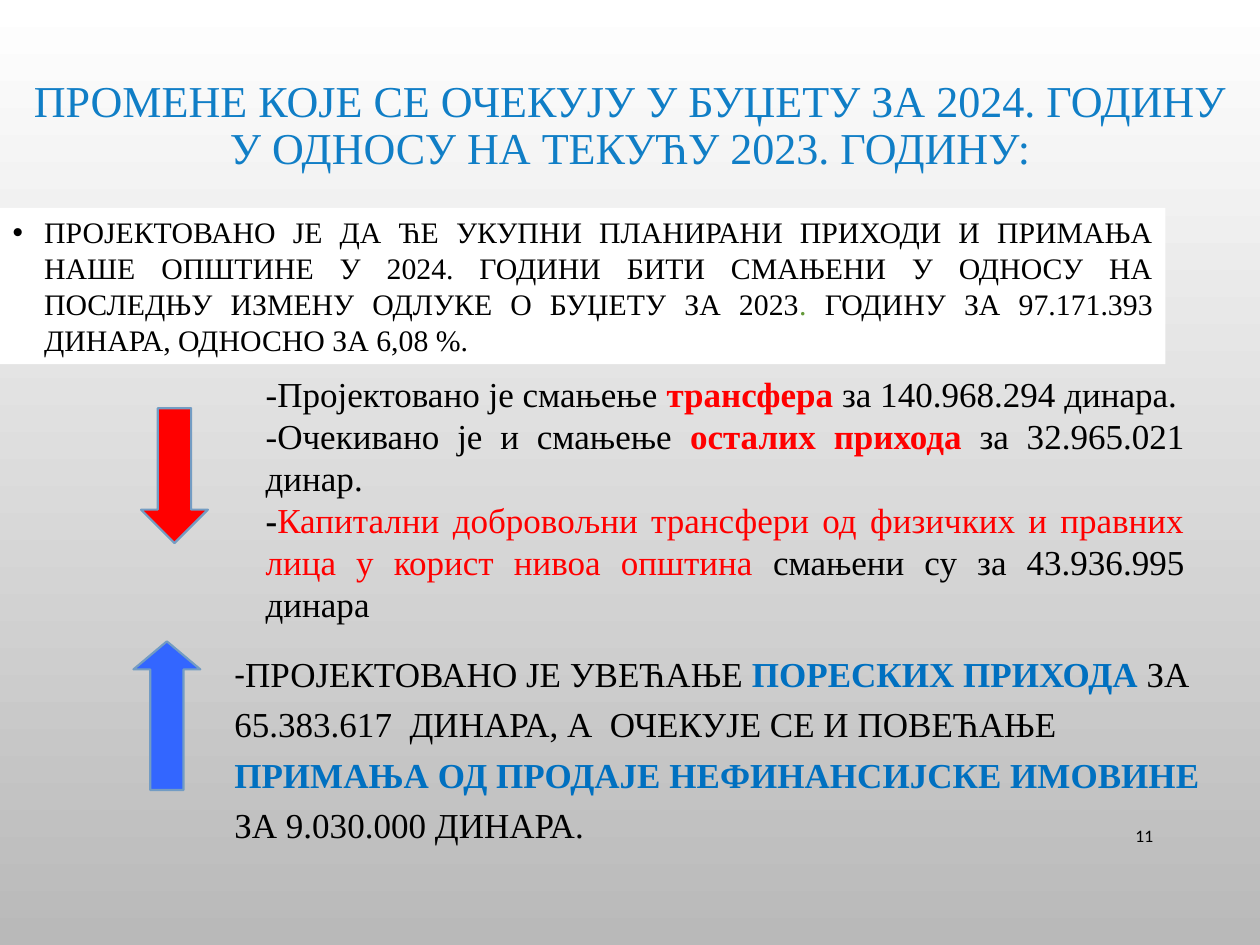
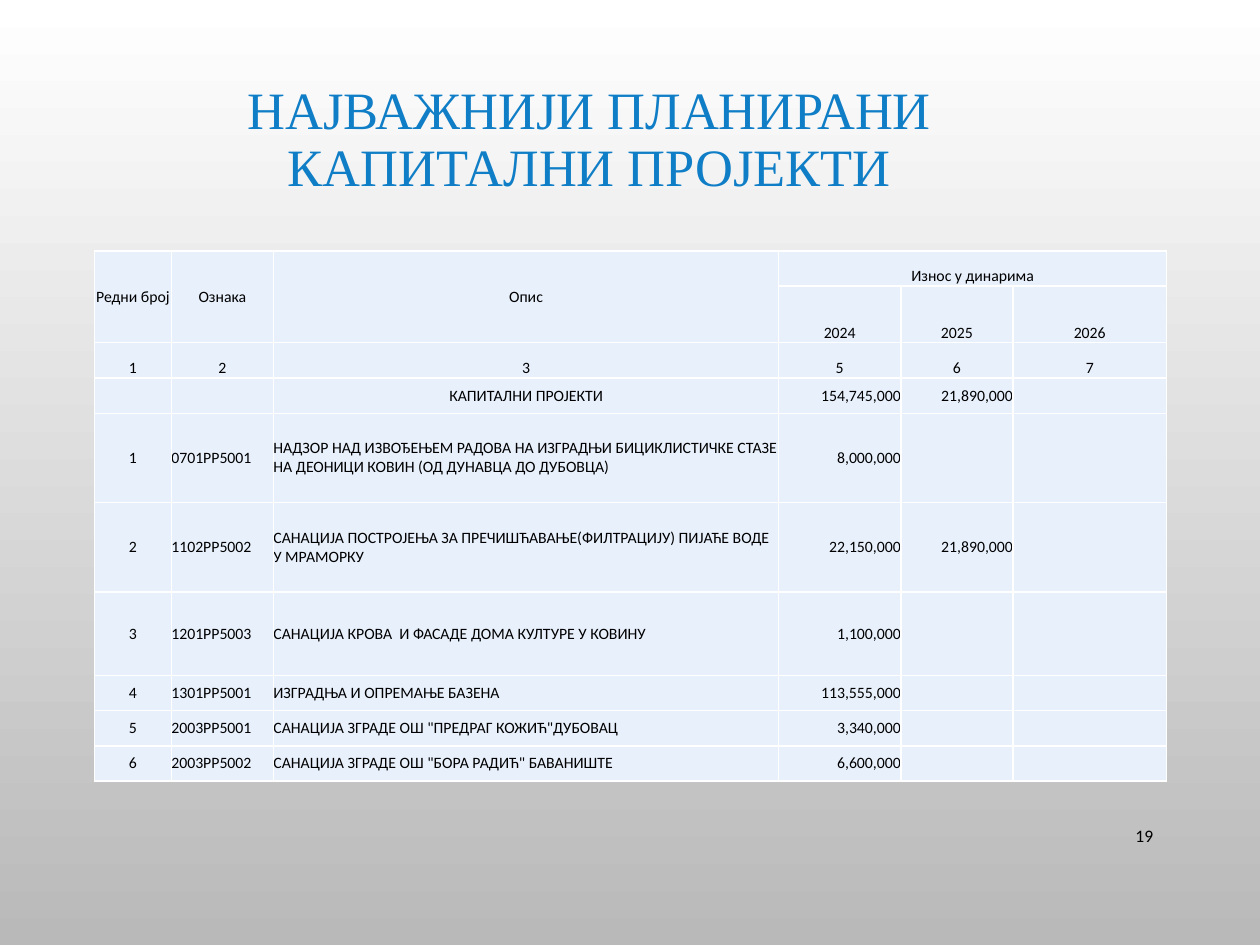
from lxml import etree
from pptx import Presentation
from pptx.dml.color import RGBColor
from pptx.enum.shapes import MSO_SHAPE
from pptx.enum.text import MSO_ANCHOR, MSO_AUTO_SIZE, PP_ALIGN
from pptx.oxml.ns import qn
from pptx.util import Inches, Pt

LEFT, CENTER, RIGHT, JUSTIFY = PP_ALIGN.LEFT, PP_ALIGN.CENTER, PP_ALIGN.RIGHT, PP_ALIGN.JUSTIFY
MIDDLE, BOTTOM = MSO_ANCHOR.MIDDLE, MSO_ANCHOR.BOTTOM
NO_AUTOFIT = MSO_AUTO_SIZE.NONE
DOWN_ARROW, UP_ARROW = MSO_SHAPE.DOWN_ARROW, MSO_SHAPE.UP_ARROW

SERIF, SANS = "Times New Roman", "Calibri"
WHITE, GREY, BLACK = "FFFFFF", "B9B9B9", "000000"
TITLE_BLUE, TEXT_BLUE, ARROW_BLUE = "107EC6", "0070C0", "3366FF"
RED, GREEN, ARROW_LINE, CELL_FILL = "FF0000", "649939", "739CC3", "E8F0FC"

presentation = Presentation()
presentation.slide_width, presentation.slide_height = Inches(10), Inches(7.5)
COLUMN = presentation.slide_width / 100
ROW = presentation.slide_height / 75
colour = RGBColor.from_string


def area(left, top, width, height):
    """Turn columns and rows of the 100 by 75 slide grid into lengths."""
    return int(left * COLUMN), int(top * ROW), int(width * COLUMN), int(height * ROW)


def write_runs(paragraph, size, pieces):
    """Add runs from (text, colour, bold, font) tuples."""
    for text, hex_colour, bold, font_name in pieces:
        run = paragraph.add_run()
        run.text = text
        run.font.size, run.font.name, run.font.bold = Pt(size), font_name, bold
        run.font.color.rgb = colour(hex_colour)


# Background, title and number of both slides
slide_frames = [
    (3, "ПРОМЕНЕ КОЈЕ СЕ ОЧЕКУЈУ У БУЏЕТУ ЗА 2024. ГОДИНУ\vУ ОДНОСУ НА ТЕКУЋУ 2023. ГОДИНУ:",
     25.2, (1.2, 3.8, 97.6, 12.5), "11"),
    (5, "НАЈВАЖНИЈИ ПЛАНИРАНИ \vКАПИТАЛНИ ПРОЈЕКТИ ", 30, (2.3, 6.4, 90, 9.6), "19"),
]
for layout, title_text, title_size, title_area, number in slide_frames:
    slide = presentation.slides.add_slide(presentation.slide_layouts[layout])
    background = slide.background.fill
    background.gradient()
    background.gradient_angle = 270
    for stop, hex_colour in zip(background.gradient_stops, (WHITE, GREY)):
        stop.color.rgb = colour(hex_colour)

    title = slide.shapes.title
    title.left, title.top, title.width, title.height = area(*title_area)
    title.text_frame.text = title_text
    title.text_frame.auto_size = NO_AUTOFIT
    title.text_frame.vertical_anchor = MIDDLE
    paragraph = title.text_frame.paragraphs[0]
    paragraph.alignment, paragraph.line_spacing = CENTER, 0.9
    for run in paragraph.runs:
        run.font.size, run.font.name = Pt(title_size), SERIF
        run.font.color.rgb = colour(TITLE_BLUE)

    number_box = slide.shapes.add_textbox(*area(86.2, 64.3, 6.3, 4))
    number_box.text_frame.word_wrap = True
    number_box.text_frame.vertical_anchor = MIDDLE
    paragraph = number_box.text_frame.paragraphs[0]
    paragraph.alignment = RIGHT
    write_runs(paragraph, 10, [(number, BLACK, False, SANS)])

changes_slide, projects_slide = presentation.slides

# Budget changes: total, decreases and increases
total, increase = changes_slide.placeholders[1], changes_slide.placeholders[2]
total.left, total.top, total.width, total.height = area(0, 16.5, 92.5, 12.4)
increase.left, increase.top, increase.width, increase.height = area(17.6, 50.6, 79.9, 14.6)
total.fill.solid()
total.fill.fore_color.rgb = colour(WHITE)
for body in (total, increase):
    body.text_frame.auto_size = NO_AUTOFIT
    body.text_frame.paragraphs[0].space_before = Pt(0)

paragraph = total.text_frame.paragraphs[0]
paragraph.alignment = JUSTIFY
properties = paragraph._p.get_or_add_pPr()
properties.set("marL", str(Inches(0.25)))
properties.set("indent", str(Inches(-0.25)))
bullet_colour = etree.SubElement(properties, qn("a:buClr"))
etree.SubElement(bullet_colour, qn("a:srgbClr"), val=BLACK)
etree.SubElement(properties, qn("a:buChar"), char="•")
write_runs(paragraph, 17, [
    ("ПРОЈЕКТОВАНО ЈЕ ДА ЋЕ УКУПНИ ПЛАНИРАНИ ПРИХОДИ И ПРИМАЊА НАШЕ ОПШТИНЕ У 2024. ГОДИНИ "
     "БИТИ СМАЊЕНИ У ОДНОСУ НА ПОСЛЕДЊУ ИЗМЕНУ ОДЛУКЕ О БУЏЕТУ ЗА 2023", BLACK, False, SERIF),
    (". ", GREEN, False, SERIF),
    ("ГОДИНУ ЗА 97.171.393 ДИНАРА, ОДНОСНО ЗА 6,08 %.", BLACK, False, SERIF),
])

paragraph = increase.text_frame.paragraphs[0]
paragraph.line_spacing = 1.2
properties = paragraph._p.get_or_add_pPr()
properties.set("marL", "0")
properties.set("indent", "0")
etree.SubElement(properties, qn("a:buNone"))
write_runs(paragraph, 20, [
    ("-", BLACK, False, SANS),
    ("ПРОЈЕКТОВАНО ЈЕ УВЕЋАЊЕ ", BLACK, False, SERIF),
    ("ПОРЕСКИХ ПРИХОДА ", TEXT_BLUE, True, SERIF),
    ("ЗА 65.383.617  ДИНАРА, А  ОЧЕКУЈЕ СЕ И ПОВЕЋАЊЕ ", BLACK, False, SERIF),
    ("ПРИМАЊА ОД ПРОДАЈЕ НЕФИНАНСИЈСКЕ ИМОВИНЕ ", TEXT_BLUE, True, SERIF),
    ("ЗА 9.030.000 ДИНАРА.", BLACK, False, SERIF),
])

decreases = [
    [("-Пројектовано је смањење ", BLACK, False, SERIF),
     ("трансфера", RED, True, SERIF),
     (" за 140.968.294 динара.", BLACK, False, SERIF)],
    [("-Очекивано је и смањење ", BLACK, False, SERIF),
     ("осталих прихода ", RED, True, SERIF),
     ("за 32.965.021 динар.", BLACK, False, SERIF)],
    [("-", BLACK, True, SERIF),
     ("Капитални добровољни трансфери од физичких и правних лица у корист нивоа општина ",
      RED, False, SERIF),
     ("смањени су за 43.936.995 динара", BLACK, False, SERIF)],
]
decrease_frame = changes_slide.shapes.add_textbox(*area(20.1, 29.1, 74.9, 21.4)).text_frame
decrease_frame.word_wrap = True
for index, pieces in enumerate(decreases):
    paragraph = decrease_frame.add_paragraph() if index else decrease_frame.paragraphs[0]
    paragraph.alignment = JUSTIFY
    write_runs(paragraph, 20, pieces)

arrows = [
    (DOWN_ARROW, (11.2, 32.4, 5.3, 10.7), RED, 0.5),
    (UP_ARROW, (10.6, 50.9, 5.3, 11.8), ARROW_BLUE, 0.42),
]
for arrow_type, arrow_area, hex_colour, head_share in arrows:
    arrow = changes_slide.shapes.add_shape(arrow_type, *area(*arrow_area))
    arrow.shadow.inherit = False
    arrow.adjustments[1] = head_share
    arrow.fill.solid()
    arrow.fill.fore_color.rgb = colour(hex_colour)
    arrow.line.color.rgb = colour(ARROW_LINE)
    arrow.line.width = Pt(1.25)

# Capital projects table
column_widths = [6.1, 8.1, 40.1, 9.7, 8.9, 12.2]
row_heights = [2.8, 4.5, 2.8, 2.8, 7.1, 7.1, 6.6, 2.8, 2.8, 2.8]
project_rows = [
    ["Редни број", "Ознака", "Опис", "Износ у динарима", "", ""],
    ["", "", "", "2024", "2025", "2026"],
    ["1", "2", "3", "5", "6", "7"],
    ["", "", "КАПИТАЛНИ ПРОЈЕКТИ", "154,745,000", "21,890,000", ""],
    ["1", "0701PP5001", "НАДЗОР НАД ИЗВОЂЕЊЕМ РАДОВА НА ИЗГРАДЊИ БИЦИКЛИСТИЧКЕ СТАЗЕ "
     "НА ДЕОНИЦИ КОВИН (ОД ДУНАВЦА ДО ДУБОВЦА)", "8,000,000", "", ""],
    ["2", "1102PP5002", "САНАЦИЈА ПОСТРОЈЕЊА ЗА ПРЕЧИШЋАВАЊЕ(ФИЛТРАЦИЈУ) ПИЈАЋЕ ВОДЕ "
     "У МРАМОРКУ", "22,150,000", "21,890,000", ""],
    ["3", "1201PP5003", "САНАЦИЈА КРОВА  И ФАСАДЕ ДОМА КУЛТУРЕ У КОВИНУ", "1,100,000", "", ""],
    ["4", "1301PP5001", "ИЗГРАДЊА И ОПРЕМАЊЕ БАЗЕНА", "113,555,000", "", ""],
    ["5", "2003PP5001", 'САНАЦИЈА ЗГРАДЕ ОШ "ПРЕДРАГ КОЖИЋ"ДУБОВАЦ', "3,340,000", "", ""],
    ["6", "2003PP5002", 'САНАЦИЈА ЗГРАДЕ ОШ "БОРА РАДИЋ" БАВАНИШТЕ', "6,600,000", "", ""],
]
HEADER_ROWS, TOTAL_ROW = 3, 3
project_alignments = [CENTER, LEFT, LEFT, RIGHT, RIGHT, RIGHT]
table = projects_slide.shapes.add_table(
    len(row_heights), len(column_widths),
    *area(7.5, 19.9, sum(column_widths), sum(row_heights))).table
table.first_row = table.horz_banding = False
for column, width in zip(table.columns, column_widths):
    column.width = int(width * COLUMN)
for row, height in zip(table.rows, row_heights):
    row.height = int(height * ROW)

for row_index, texts in enumerate(project_rows):
    for column_index, text in enumerate(texts):
        cell = table.cell(row_index, column_index)
        cell.margin_left = cell.margin_right = cell.margin_top = cell.margin_bottom = 0
        in_header = row_index < HEADER_ROWS
        spans_header = row_index == 0 and column_index < 3
        cell.vertical_anchor = BOTTOM if in_header and not spans_header else MIDDLE
        paragraph = cell.text_frame.paragraphs[0]
        centred = in_header or (row_index == TOTAL_ROW and column_index == 2)
        paragraph.alignment = CENTER if centred else project_alignments[column_index]
        if text:
            write_runs(paragraph, 9, [(text, BLACK, False, SANS)])
        else:
            etree.SubElement(paragraph._p, qn("a:endParaRPr"), sz="900")
        cell_properties = cell._tc.get_or_add_tcPr()
        for side in ("a:lnL", "a:lnR", "a:lnT", "a:lnB"):
            border = etree.SubElement(cell_properties, qn(side), w=str(Pt(1)))
            border_fill = etree.SubElement(border, qn("a:solidFill"))
            etree.SubElement(border_fill, qn("a:srgbClr"), val=WHITE)
        cell.fill.solid()
        cell.fill.fore_color.rgb = colour(CELL_FILL)

for column_index in range(3):
    table.cell(0, column_index).merge(table.cell(1, column_index))
table.cell(0, 3).merge(table.cell(0, 5))

presentation.save("out.pptx")
